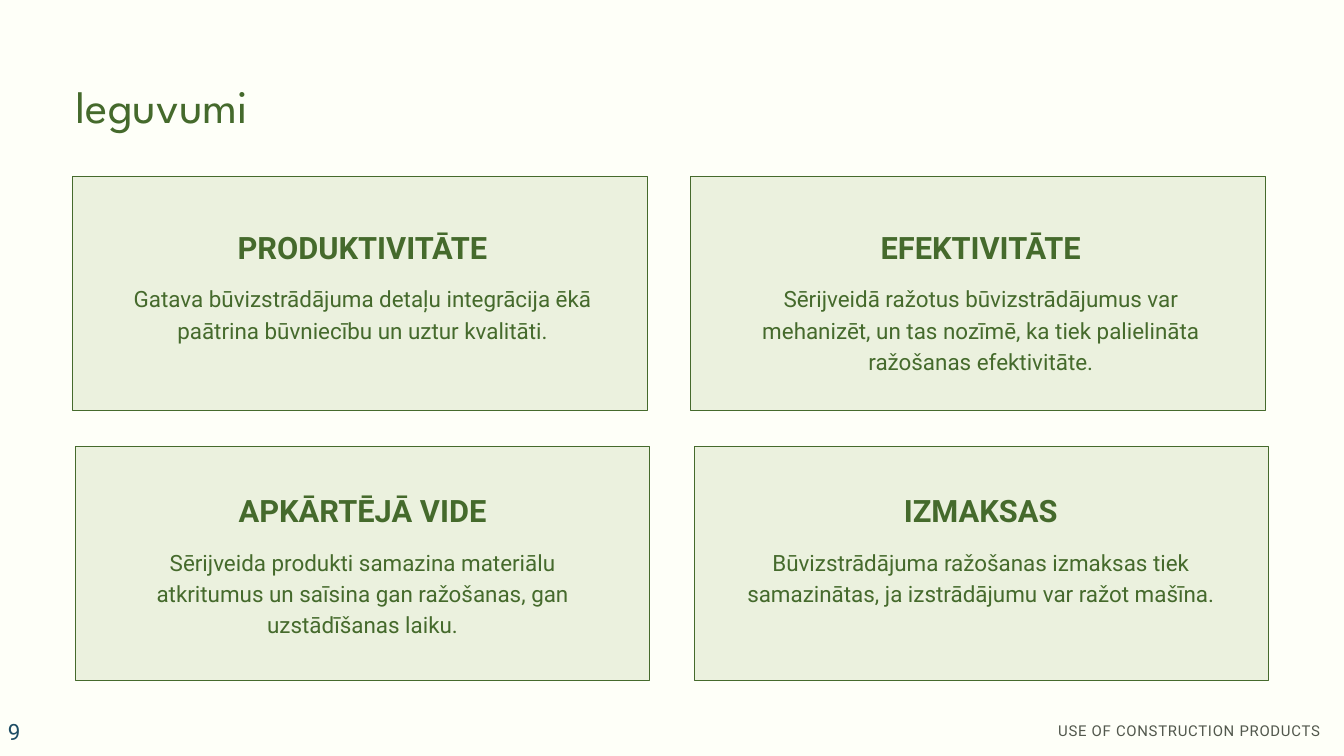
"""Build the slide on the benefits of prefabricated construction products."""
from pptx import Presentation
from pptx.dml.color import RGBColor
from pptx.enum.shapes import MSO_SHAPE
from pptx.enum.text import MSO_ANCHOR as Anchor, MSO_AUTO_SIZE as AutoSize, PP_ALIGN as Align
from pptx.util import Inches, Pt

GREEN = "456A2C"
CARDS = [
    (1.08, 2.62, 3.38, "PRODUKTIVITĀTE",
     "Gatava būvizstrādājuma detaļu integrācija ēkā paātrina būvniecību un uztur kvalitāti."),
    (10.28, 2.62, 3.38, "EFEKTIVITĀTE",
     "Sērijveidā ražotus būvizstrādājumus var mehanizēt, un tas nozīmē, "
     "ka tiek palielināta ražošanas efektivitāte."),
    (1.12, 6.64, 7.3, "APKĀRTĒJĀ VIDE",
     "Sērijveida produkti samazina materiālu atkritumus un saīsina gan ražošanas, "
     "gan uzstādīšanas laiku."),
    (10.33, 6.64, 7.3, "IZMAKSAS",
     "Būvizstrādājuma ražošanas izmaksas tiek samazinātas, ja izstrādājumu var ražot mašīna."),
]
TEXT_LEFTS = [1.7, 10.9]


def color(value):
    return RGBColor.from_string(value)


class SlideBuilder:
    def __init__(self, slide, font="Roboto", ink=GREEN, panel="EBF1DE"):
        self.slide = slide
        self.font = font
        self.ink = ink
        self.panel = panel

    def background(self, value):
        fill = self.slide.background.fill
        fill.solid()
        fill.fore_color.rgb = color(value)

    def format_text(self, shape, text, size, leading=None, align=Align.LEFT, font=None,
                    ink=None, bold=False, tracking=0, anchor=Anchor.TOP, insets=(0, 0)):
        frame = shape.text_frame
        frame.text = text
        frame.word_wrap = True
        frame.auto_size = AutoSize.NONE
        frame.vertical_anchor = anchor
        frame.margin_left = frame.margin_right = Inches(insets[0])
        frame.margin_top = frame.margin_bottom = Inches(insets[1])
        paragraph = frame.paragraphs[0]
        paragraph.alignment = align
        if leading:
            paragraph.line_spacing = Pt(leading)
        run = paragraph.runs[0]
        run.font.name = font or self.font
        run.font.size = Pt(size)
        run.font.bold = bold
        run.font.color.rgb = color(ink or self.ink)
        if tracking:
            run._r.get_or_add_rPr().set("spc", str(round(tracking * 100)))

    def title(self, text, left, top, width, height):
        shape = self.slide.shapes.title
        shape.left, shape.top = Inches(left), Inches(top)
        shape.width, shape.height = Inches(width), Inches(height)
        self.format_text(shape, text, 50, 66.8, font="League Spartan")

    def text(self, text, left, top, width, height, size, **style):
        box = self.slide.shapes.add_textbox(
            Inches(left), Inches(top), Inches(width), Inches(height))
        self.format_text(box, text, size, **style)

    def rectangle(self, left, top, width, height):
        shape = self.slide.shapes.add_shape(
            MSO_SHAPE.RECTANGLE, Inches(left), Inches(top), Inches(width), Inches(height))
        shape.shadow.inherit = False
        shape.fill.solid()
        shape.fill.fore_color.rgb = color(self.panel)
        shape.line.color.rgb = color(self.ink)
        shape.line.width = Pt(0.75)

    def card(self, left, top, text_left, text_top, heading, body):
        self.rectangle(left, top, 8.55, 3.48)
        self.text(heading, text_left, text_top, 7.39, 0.56, 33,
                  leading=41.2, align=Align.CENTER, bold=True)
        self.text(body, text_left, text_top + 0.8, 7.39, 1.4, 24,
                  leading=33.6, align=Align.CENTER)


def main():
    presentation = Presentation()
    presentation.slide_width = Inches(20)
    presentation.slide_height = Inches(11.25)
    builder = SlideBuilder(presentation.slides.add_slide(presentation.slide_layouts[5]))
    builder.background("FEFFF8")
    builder.text("USE OF CONSTRUCTION PRODUCTS", 11.33, 10.7, 8.32, 0.29, 16,
                 leading=22.4, align=Align.RIGHT, ink="52584D", tracking=0.8)
    builder.title("Ieguvumi", 1.12, 1.05, 17.71, 0.94)
    for index, (left, top, text_top, heading, body) in enumerate(CARDS):
        builder.card(left, top, TEXT_LEFTS[index % 2], text_top, heading, body)
    builder.text("9", 0.02, 10.69, 2.33, 0.4, 24, ink="1E4D65", tracking=1.2,
                 anchor=Anchor.MIDDLE, insets=(0.1, 0.05))
    presentation.save("out.pptx")


if __name__ == "__main__":
    main()
